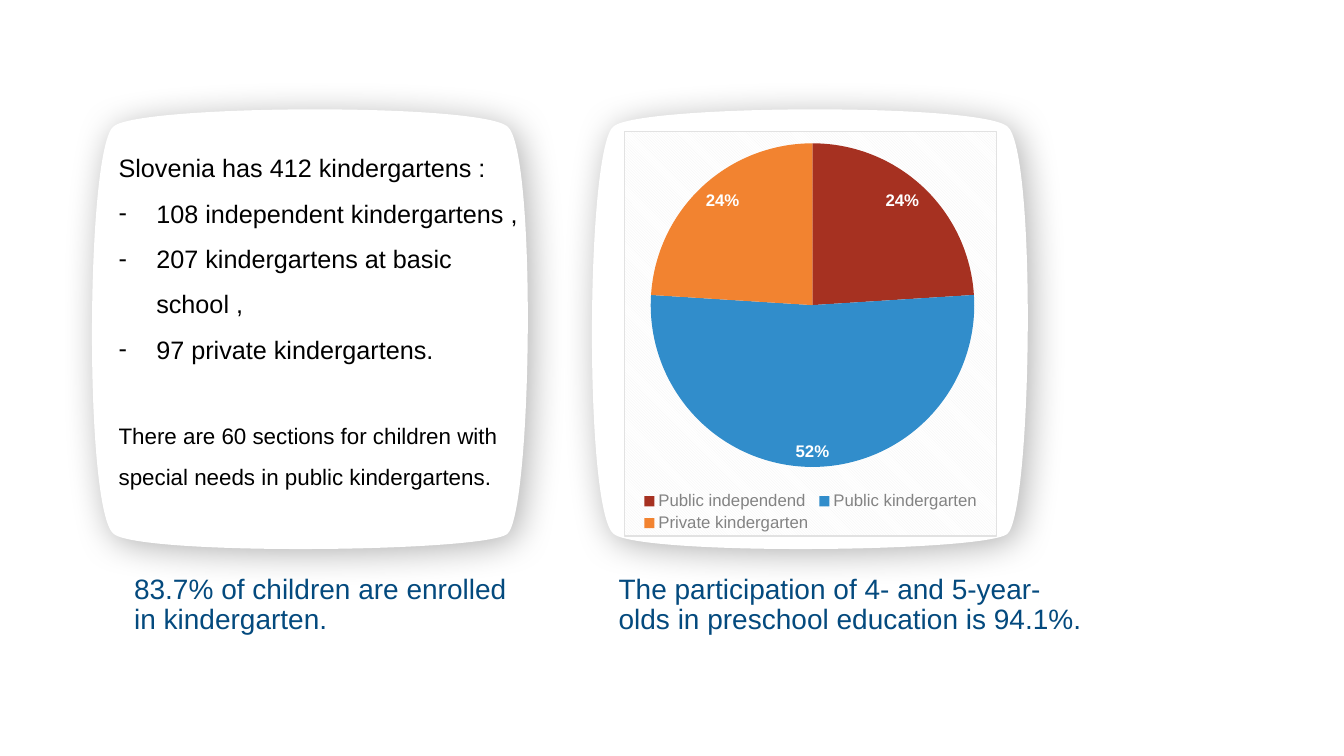
from lxml import etree
from pptx import Presentation
from pptx.chart.data import CategoryChartData
from pptx.dml.color import RGBColor
from pptx.enum.chart import XL_CHART_TYPE, XL_LABEL_POSITION, XL_LEGEND_POSITION
from pptx.oxml import parse_xml
from pptx.oxml.ns import nsdecls, qn
from pptx.util import Cm, Pt

FONT = "Arial"
WHITE = RGBColor(0xFF, 0xFF, 0xFF)
BLACK = RGBColor(0x00, 0x00, 0x00)
NAVY = RGBColor(0x04, 0x4A, 0x7E)
GREY = RGBColor(0x83, 0x83, 0x83)
DARK_GREY = RGBColor(0x40, 0x40, 0x40)
RED = RGBColor(0xA6, 0x31, 0x21)
BLUE = RGBColor(0x31, 0x8D, 0xCB)
ORANGE = RGBColor(0xF2, 0x83, 0x30)

# Left panel in cm: the first corner, then two handles and a corner per curve.
PANEL_OUTLINE = [
    (12.78, 3.18),
    (13.54, 3.73), (13.41, 12.98), (12.78, 13.46),
    (12.12, 13.92), (3.61, 14.0), (2.87, 13.46),
    (2.11, 12.9), (2.16, 3.68), (2.87, 3.18),
    (3.56, 2.64), (11.99, 2.59), (12.78, 3.18),
]
PANEL_PITCH = 12.6

KINDERGARTENS = [
    "108 independent kindergartens ,",
    "207 kindergartens at basic school ,",
    "97 private kindergartens.",
]
SHARES = [
    ("Public independend", 24, RED),
    ("Public kindergarten", 52, BLUE),
    ("Private kindergarten", 24, ORANGE),
]
PLOT_LAYOUT = {"x": 0.07, "y": 0.03, "w": 0.87, "h": 0.8}


def bend_sides(panel):
    """Turn every three straight segments of the outline into one cubic curve."""
    path = panel._element.spPr.find(".//" + qn("a:path"))
    segments = path.findall(qn("a:lnTo"))
    for first in range(0, len(segments), 3):
        curve = etree.Element(qn("a:cubicBezTo"))
        segments[first].addprevious(curve)
        for segment in segments[first:first + 3]:
            curve.append(segment.find(qn("a:pt")))
            path.remove(segment)


def add_panel(slide, offset):
    points = [(Cm(x + offset), Cm(y)) for x, y in PANEL_OUTLINE]
    builder = slide.shapes.build_freeform(*points[0])
    builder.add_line_segments(points[1:], close=True)
    panel = builder.convert_to_shape()
    bend_sides(panel)
    panel.fill.solid()
    panel.fill.fore_color.rgb = WHITE
    panel.line.fill.background()
    panel.shadow.inherit = False
    effects = panel._element.spPr.find(qn("a:effectLst"))
    effects.append(parse_xml(
        f'<a:outerShdw {nsdecls("a")} blurRad="{Pt(25)}" dist="{Pt(5)}" dir="2700000" '
        'algn="tl" rotWithShape="0"><a:srgbClr val="000000"><a:alpha val="30000"/>'
        '</a:srgbClr></a:outerShdw>'))


def add_text_frame(slide, left, top, width, height):
    box = slide.shapes.add_textbox(Cm(left), Cm(top), Cm(width), Cm(height))
    box.text_frame.word_wrap = True
    return box.text_frame


def write(paragraph, text, size, color, spacing):
    paragraph.line_spacing = spacing
    run = paragraph.add_run()
    run.text = text
    run.font.name = FONT
    run.font.size = Pt(size)
    run.font.color.rgb = color


def add_dash(paragraph):
    properties = paragraph._p.get_or_add_pPr()
    properties.set("marL", str(Cm(0.95)))
    properties.set("indent", str(-Cm(0.95)))
    etree.SubElement(properties, qn("a:buFont")).set("typeface", FONT)
    etree.SubElement(properties, qn("a:buChar")).set("char", "-")


def add_facts(slide):
    frame = add_text_frame(slide, 2.74, 3.34, 10.59, 10.36)
    write(frame.paragraphs[0], "Slovenia has 412 kindergartens :", 18, BLACK, 1.5)
    for kind in KINDERGARTENS:
        item = frame.add_paragraph()
        add_dash(item)
        write(item, kind, 18, BLACK, 1.5)
    sections = frame.add_paragraph()
    sections.space_before = Pt(32)
    write(sections, "There are 60 sections for children with special needs "
          "in public kindergartens.", 16, BLACK, 1.5)


def add_caption(slide, left, width, height, text):
    frame = add_text_frame(slide, left, 14.37, width, height)
    write(frame.paragraphs[0], text, 20, NAVY, 0.9)


def style_font(font, size, color):
    font.name = FONT
    font.size = Pt(size)
    font.color.rgb = color


def style_chart_area(chart):
    """Give the chart its hatched ground, thin border and plot position."""
    chart_space = chart._chartSpace
    chart_space.find(qn("c:chart")).addnext(parse_xml(
        f'<c:spPr {nsdecls("c", "a")}><a:pattFill prst="dkDnDiag">'
        '<a:fgClr><a:srgbClr val="F2F2F2"/></a:fgClr>'
        '<a:bgClr><a:srgbClr val="FFFFFF"/></a:bgClr></a:pattFill>'
        f'<a:ln w="{Pt(0.75)}"><a:solidFill><a:srgbClr val="E2E2E2"/></a:solidFill></a:ln>'
        '</c:spPr>'))
    plot_area = chart_space.find(".//" + qn("c:plotArea"))
    for old_layout in plot_area.findall(qn("c:layout")):
        plot_area.remove(old_layout)
    sides = "".join(f'<c:{side} val="{share}"/>' for side, share in PLOT_LAYOUT.items())
    plot_area.insert(0, parse_xml(
        f'<c:layout {nsdecls("c")}><c:manualLayout><c:layoutTarget val="inner"/>'
        f'<c:xMode val="edge"/><c:yMode val="edge"/>{sides}</c:manualLayout></c:layout>'))


def add_share_pie(slide):
    names, values, colors = zip(*SHARES)
    shares = CategoryChartData()
    shares.categories = names
    shares.add_series("Series 1", values)
    chart = slide.shapes.add_chart(
        XL_CHART_TYPE.PIE, Cm(15.73), Cm(3.29), Cm(9.4), Cm(10.23), shares).chart
    style_font(chart.font, 10, DARK_GREY)
    chart.has_title = False
    chart.has_legend = True
    chart.legend.position = XL_LEGEND_POSITION.BOTTOM
    chart.legend.include_in_layout = False
    style_font(chart.legend.font, 12, GREY)

    pie = chart.plots[0]
    pie.vary_by_categories = True
    for index, color in enumerate(colors):
        fill = pie.series[0].points[index].format.fill
        fill.solid()
        fill.fore_color.rgb = color
    labels = pie.series[0].data_labels
    labels.show_percentage = True
    labels.show_value = False
    labels.number_format = "0%"
    labels.number_format_is_linked = False
    labels.position = XL_LABEL_POSITION.INSIDE_END
    style_font(labels.font, 12, WHITE)
    labels.font.bold = True
    style_chart_area(chart)


def main():
    deck = Presentation()
    deck.slide_width, deck.slide_height = Cm(33.87), Cm(19.05)
    slide = deck.slides.add_slide(deck.slide_layouts[6])
    for column in range(2):
        add_panel(slide, column * PANEL_PITCH)
    add_caption(slide, 3.13, 9.91, 2.13, "83.7% of children are enrolled in kindergarten.")
    add_caption(slide, 15.34, 12.2, 1.96,
                "The participation of 4- and 5-year-olds in preschool education is 94.1%.")
    add_facts(slide)
    add_share_pie(slide)
    deck.save("out.pptx")


if __name__ == "__main__":
    main()
